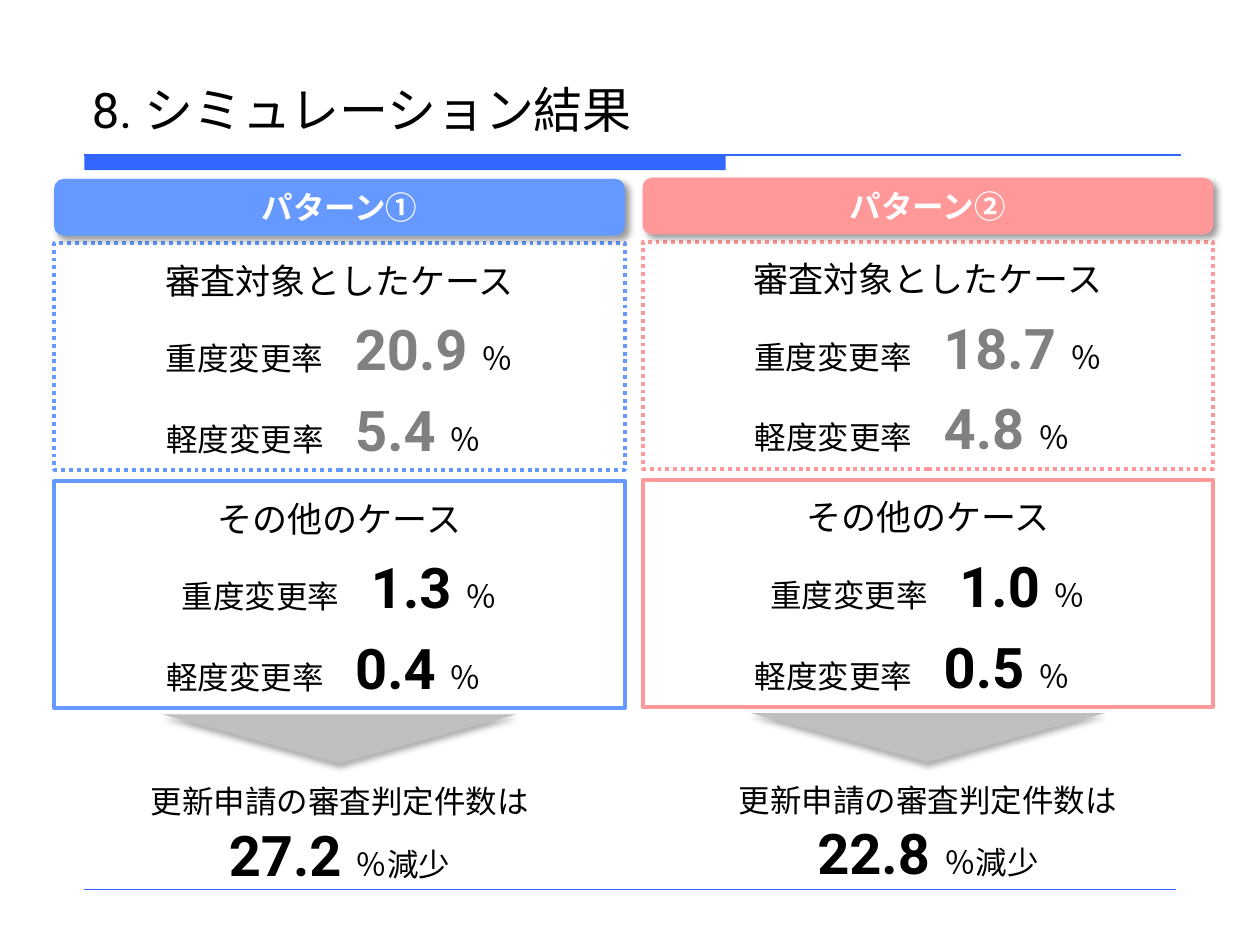
import pptx
import pptx.util
import pptx.dml.color
import pptx.enum.dml
import pptx.enum.shapes
import pptx.enum.text
import pptx.oxml
import pptx.oxml.ns

Inches = pptx.util.Inches
Pt = pptx.util.Pt
RGBColor = pptx.dml.color.RGBColor
Shape = pptx.enum.shapes.MSO_SHAPE
Align = pptx.enum.text.PP_ALIGN
Anchor = pptx.enum.text.MSO_ANCHOR
qn = pptx.oxml.ns.qn

BLACK = RGBColor(0x00, 0x00, 0x00)
WHITE = RGBColor(0xFF, 0xFF, 0xFF)
GRAY = RGBColor(0x80, 0x80, 0x80)
SILVER = RGBColor(0xBF, 0xBF, 0xBF)
BLUE = RGBColor(0x66, 0x99, 0xFF)
PINK = RGBColor(0xFF, 0x99, 0x99)
RULE_BLUE = RGBColor(0x33, 0x66, 0xFF)
JAPANESE = "Noto Sans CJK JP"
LATIN = "Roboto"

HEADING = {"size": Pt(20), "name": JAPANESE, "bold": False}
LABEL = {"size": Pt(18), "name": JAPANESE, "bold": False}
NUMBER = {"size": Pt(32), "name": LATIN, "bold": True}
BANNER = {"size": Pt(18), "name": JAPANESE, "bold": True}
TITLE = {"size": Pt(28), "name": LATIN, "bold": False}
CENTERED = {"alignment": Align.CENTER}
SPACED = {"alignment": Align.CENTER, "line_spacing": 1.2}


def write_paragraph(para, para_format, spans):
    for key, value in para_format.items():
        setattr(para, key, value)
    for words, font_format, color in spans:
        span = para.add_run()
        span.text = words
        for key, value in font_format.items():
            setattr(span.font, key, value)
        span.font.color.rgb = color
        east_asian = pptx.oxml.parse_xml(
            f'<a:ea {pptx.oxml.ns.nsdecls("a")} typeface="{JAPANESE}"/>')
        span.font._element.find(qn("a:latin")).addnext(east_asian)


def add_box(kind, left, top, width, height, fill, shadow=None):
    box = page.shapes.add_shape(kind, Inches(left), Inches(top), Inches(width), Inches(height))
    box.shadow.inherit = False
    box.fill.solid()
    box.fill.fore_color.rgb = fill
    box.line.fill.background()
    if shadow:
        alpha, blur, distance, angle = shadow
        effect = pptx.oxml.parse_xml(
            f'<a:outerShdw {pptx.oxml.ns.nsdecls("a")} blurRad="{Pt(blur)}" '
            f'dist="{Pt(distance)}" dir="{angle * 60000}" algn="tl" rotWithShape="0">'
            f'<a:srgbClr val="000000"><a:alpha val="{alpha * 1000}"/></a:srgbClr></a:outerShdw>')
        box._element.spPr.find(qn("a:effectLst")).append(effect)
    return box


deck = pptx.Presentation()
deck.slide_width = Inches(10)
deck.slide_height = Inches(7.5)
page = deck.slides.add_slide(deck.slide_layouts[5])

title = page.shapes.title
title_format = {"left": Inches(0.63), "top": Inches(0.33),
                "width": Inches(8.75), "height": Inches(0.82)}
for key, value in title_format.items():
    setattr(title, key, value)
title.text_frame.auto_size = pptx.enum.text.MSO_AUTO_SIZE.NONE
title.text_frame.vertical_anchor = Anchor.BOTTOM
write_paragraph(title.text_frame.paragraphs[0], {"alignment": Align.LEFT},
                [("8. シミュレーション結果", TITLE, BLACK)])

add_box(Shape.RECTANGLE, 0.67, 1.23, 5.09, 0.12, RULE_BLUE)
for y, right, weight in [(1.23, 9.37, 0.75), (7.06, 9.33, 0.25)]:
    rule = page.shapes.add_connector(pptx.enum.shapes.MSO_CONNECTOR.STRAIGHT,
                                     Inches(0.67), Inches(y), Inches(right), Inches(y))
    rule.line.color.rgb = RULE_BLUE
    rule.line.width = Pt(weight)
    rule._element.spPr.append(pptx.oxml.parse_xml(
        f'<a:effectLst {pptx.oxml.ns.nsdecls("a")}/>'))

patterns = [
    ("パターン①", 0.43, 1.42, BLUE, ("20.9", "5.4"), ("1.3", "0.4"), "27.2"),
    ("パターン②", 5.10, 1.41, PINK, ("18.7", "4.8"), ("1.0", "0.5"), "22.8"),
]
for name, left, top, color, reviewed, others, reduction in patterns:
    cases = [
        ("審査対象としたケース", 0.51, reviewed, GRAY, pptx.enum.dml.MSO_LINE.ROUND_DOT),
        ("その他のケース", 2.4, others, BLACK, pptx.enum.dml.MSO_LINE.SOLID),
    ]
    for heading, offset, (heavier, lighter), number_color, dash in cases:
        case = add_box(Shape.RECTANGLE, left, top + offset, 4.53, 1.8, WHITE)
        line_format = {"width": Pt(2.25), "dash_style": dash}
        case.line.color.rgb = color
        for key, value in line_format.items():
            setattr(case.line, key, value)
        frame = case.text_frame
        frame.vertical_anchor = Anchor.MIDDLE
        lines = [[(heading, HEADING, BLACK)]]
        for label, rate, unit in [("重度変更率　", heavier, "％"), ("軽度変更率　", lighter, "％　")]:
            lines.append([(label, LABEL, BLACK), (rate + " ", NUMBER, number_color),
                          (unit, LABEL, BLACK)])
        for index, spans in enumerate(lines):
            para = frame.add_paragraph() if index else frame.paragraphs[0]
            write_paragraph(para, SPACED, spans)
            properties = para._p.get_or_add_pPr()
            properties.set("marL", str(Inches(0.2)))
            properties.set("indent", str(Inches(-0.2)))

    summary = page.shapes.add_textbox(Inches(left + 0.65), Inches(top + 4.74),
                                      Inches(3.23), Inches(0.94))
    summary.text_frame.word_wrap = False
    write_paragraph(summary.text_frame.paragraphs[0], CENTERED,
                    [("更新申請の審査判定件数は", LABEL, BLACK)])
    write_paragraph(summary.text_frame.add_paragraph(), CENTERED,
                    [(reduction + " ", NUMBER, BLACK), ("％減少", LABEL, BLACK)])

    banner = add_box(Shape.ROUNDED_RECTANGLE, left, top, 4.53, 0.45, color, (40, 4, 3, 45))
    banner.text_frame.vertical_anchor = Anchor.MIDDLE
    write_paragraph(banner.text_frame.paragraphs[0], CENTERED, [(name, BANNER, WHITE)])

    arrow = add_box(Shape.ISOSCELES_TRIANGLE, left + 0.86, top + 4.25, 2.81, 0.39,
                    SILVER, (32, 3.5, 2.2, 90))
    arrow._element.spPr.find(qn("a:xfrm")).set("flipV", "1")

deck.save("out.pptx")
